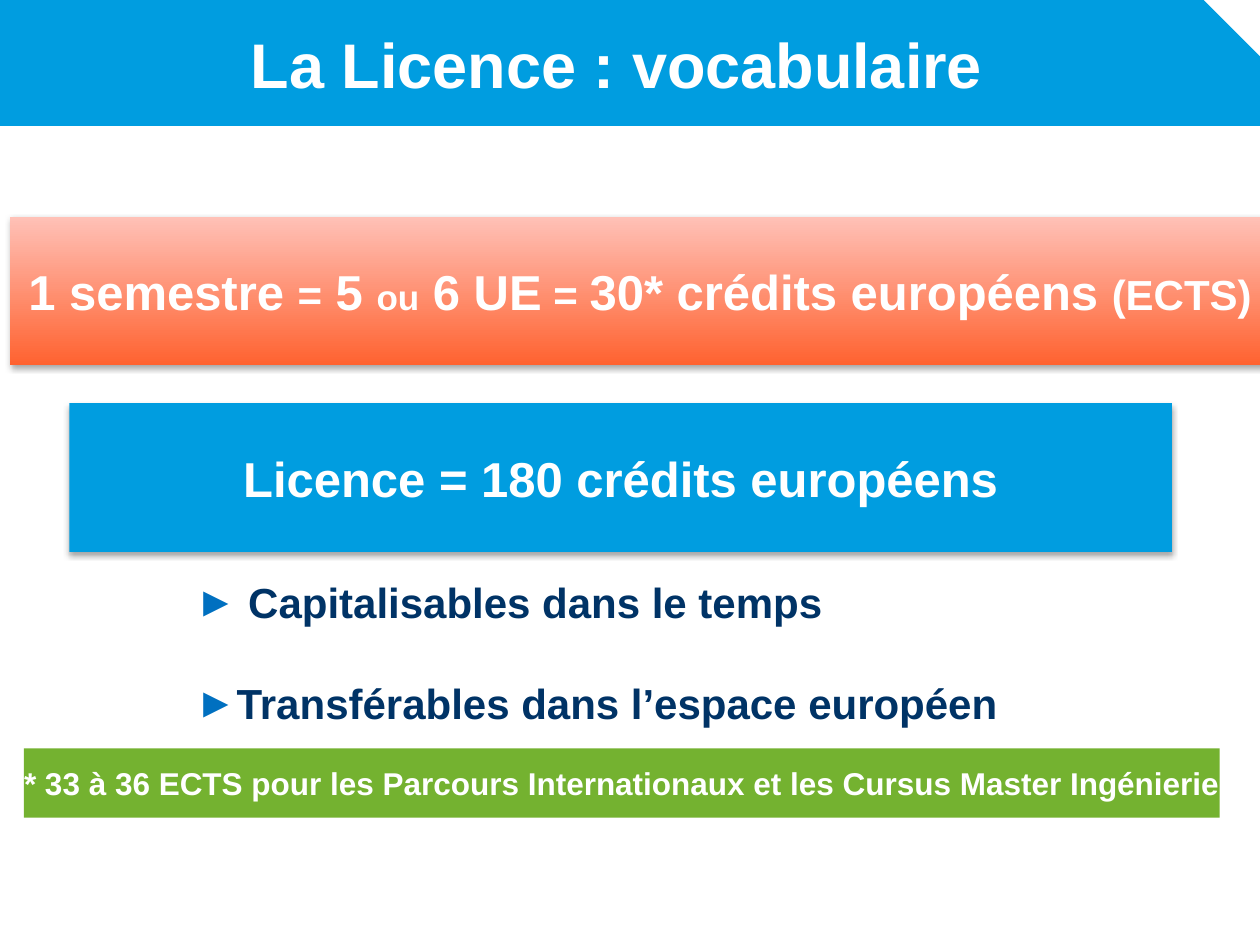
from lxml import etree
from pptx import Presentation
from pptx.dml.color import RGBColor
from pptx.enum.shapes import MSO_SHAPE
from pptx.enum.text import MSO_ANCHOR, PP_ALIGN
from pptx.oxml import parse_xml
from pptx.oxml.ns import nsdecls, qn
from pptx.util import Inches, Pt

RECT = MSO_SHAPE.RECTANGLE
SNIP = MSO_SHAPE.SNIP_1_RECTANGLE
MIDDLE = MSO_ANCHOR.MIDDLE
CENTER = PP_ALIGN.CENTER
BLUE = "009DE0"
WHITE = "FFFFFF"
SHADE = (
    f'<a:effectLst {nsdecls("a")}>'
    '<a:outerShdw blurRad="40000" dist="23000" dir="5400000" rotWithShape="0">'
    '<a:srgbClr val="000000"><a:alpha val="35000"/></a:srgbClr>'
    '</a:outerShdw></a:effectLst>'
)


def color(code):
    return RGBColor.from_string(code)


class Deck:
    font = "Arial"

    def __init__(self, slide):
        self.slide = slide

    def add_runs(self, para, runs, ink=WHITE):
        for text, size in runs:
            run = para.add_run()
            run.text = text
            run.font.name = self.font
            run.font.size = Pt(size)
            run.font.bold = True
            run.font.color.rgb = color(ink)

    def text(self, x, y, w, h):
        box = self.slide.shapes.add_textbox(
            Inches(x), Inches(y), Inches(w), Inches(h))
        box.text_frame.word_wrap = True
        return box.text_frame

    def title(self, x, y, w, h, runs):
        frame = self.text(x, y, w, h)
        frame.vertical_anchor = MIDDLE
        frame.margin_left = Inches(0.39)
        para = frame.paragraphs[0]
        para.alignment = CENTER
        self.add_runs(para, runs)

    def band(self, x, y, w, h, fills, runs=(), shade=False, kind=RECT):
        shape = self.slide.shapes.add_shape(
            kind, Inches(x), Inches(y), Inches(w), Inches(h))
        shape.shadow.inherit = False
        shape.line.fill.background()
        if len(fills) == 1:
            shape.fill.solid()
            shape.fill.fore_color.rgb = color(fills[0])
        else:
            shape.fill.gradient()
            shape.fill.gradient_angle = 90
            for stop, code in zip(shape.fill.gradient_stops, fills):
                stop.color.rgb = color(code)
        if shade:
            props = shape._element.spPr
            props.replace(props.find(qn("a:effectLst")), parse_xml(SHADE))
        if runs:
            frame = shape.text_frame
            frame.word_wrap = False
            frame.vertical_anchor = MIDDLE
            para = frame.paragraphs[0]
            para.alignment = CENTER
            self.add_runs(para, runs)
        return shape

    def bullets(self, x, y, w, h, lines, size, ink):
        frame = self.text(x, y, w, h)
        for i, line in enumerate(lines):
            para = frame.paragraphs[0] if i == 0 else frame.add_paragraph()
            para.level = 1
            props = para._p.get_or_add_pPr()
            props.set("marL", str(Inches(0.5)))
            props.set("indent", "0")
            tint = etree.SubElement(props, qn("a:buClr"))
            etree.SubElement(tint, qn("a:srgbClr"), val="0070C0")
            etree.SubElement(props, qn("a:buFont"), typeface=self.font)
            etree.SubElement(props, qn("a:buChar"), char="►")
            para.font.size = Pt(size)
            self.add_runs(para, [(line, size)], ink)
            if i < len(lines) - 1:
                para.add_line_break()


def main():
    show = Presentation()
    show.slide_width = Inches(10)
    show.slide_height = Inches(7.5)
    deck = Deck(show.slides.add_slide(show.slide_layouts[6]))

    head = deck.band(0, 0, 10.01, 1, [BLUE], kind=SNIP)
    head.adjustments[0] = 0.458
    deck.title(0, 0, 9.5, 1, [("La Licence : vocabulaire", 36)])
    deck.band(0.55, 3.2, 8.75, 1.18, [BLUE],
              [("Licence = 180 crédits européens", 28)], shade=True)
    deck.band(0.08, 1.72, 10, 1.18, ["FF6230", "FFC1B7"], [
        ("1 semestre ", 28), ("=", 24), (" 5 ", 28), ("ou", 20),
        (" 6 UE", 28), (" = ", 24), ("30* crédits européens ", 28),
        ("(ECTS)", 24),
    ], shade=True)
    deck.bullets(0.95, 4.53, 7.8, 1.31, [
        " Capitalisables dans le temps",
        "Transférables dans l’espace européen",
    ], 24, "003366")
    deck.band(0.19, 5.94, 9.49, 0.55, ["74B230"], [
        ("* 33 à 36 ECTS pour les Parcours Internationaux"
         " et les Cursus Master Ingénierie", 18),
    ])
    show.save("out.pptx")


if __name__ == "__main__":
    main()
